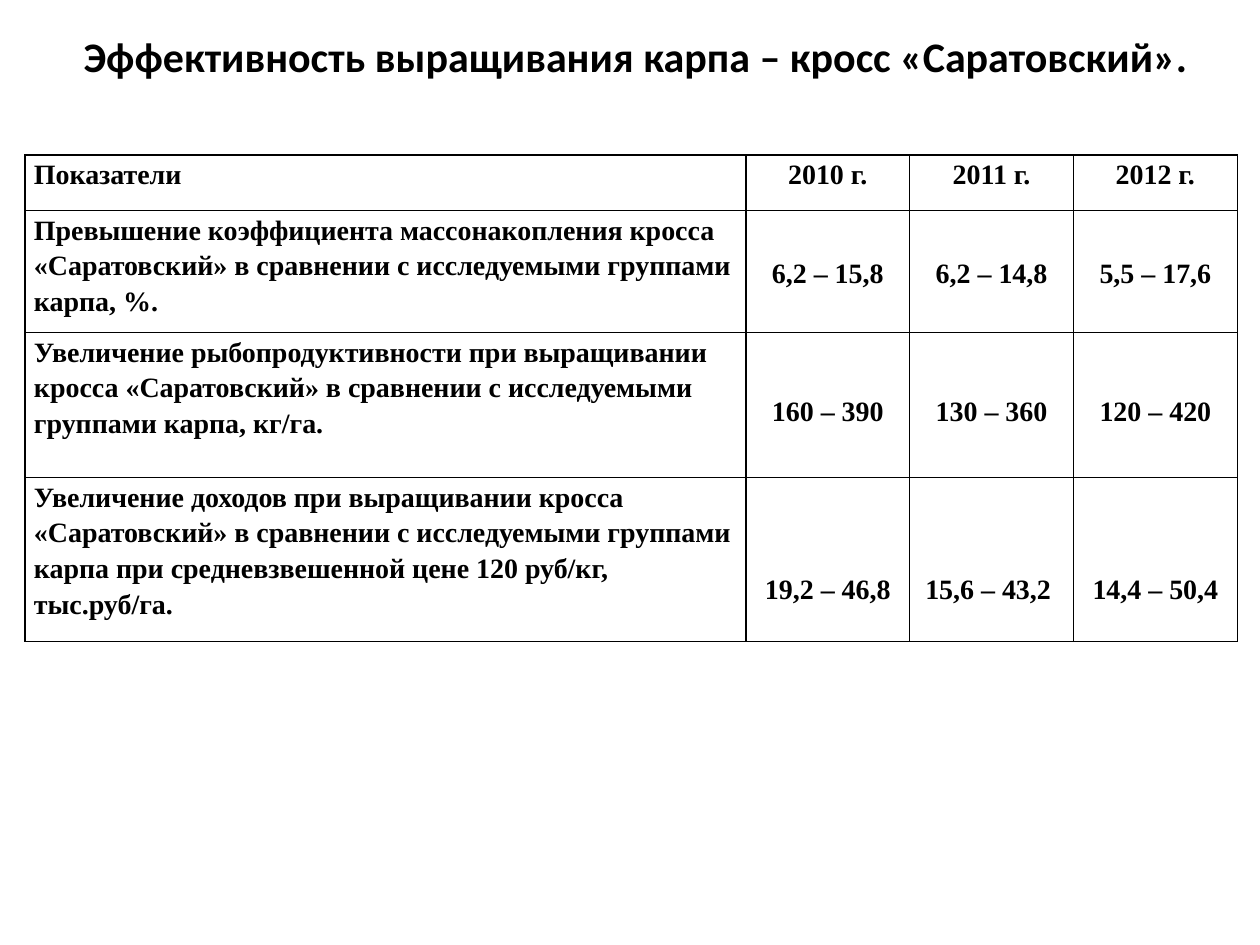
"""Builds a slide with a table on the efficiency of growing the Saratov carp cross."""
import pptx
import pptx.dml.color
import pptx.enum.text
import pptx.oxml
import pptx.oxml.ns
import pptx.util

Inches = pptx.util.Inches
ALIGN = pptx.enum.text.PP_ALIGN
ANCHOR = pptx.enum.text.MSO_ANCHOR

TITLE = "Эффективность выращивания карпа – кросс «Саратовский»."
HEADER = ("Показатели", "2010 г.", "2011 г.", "2012 г.")
ROWS = [
    ("Превышение коэффициента массонакопления кросса «Саратовский» в сравнении "
     "с исследуемыми группами карпа, %.",
     "6,2 – 15,8", "6,2 – 14,8", "5,5 – 17,6"),
    ("Увеличение рыбопродуктивности при выращивании кросса «Саратовский» "
     "в сравнении с исследуемыми группами карпа, кг/га.",
     "160 – 390", "130 – 360", "120 – 420"),
    ("Увеличение доходов при выращивании кросса «Саратовский» в сравнении "
     "с исследуемыми группами карпа при средневзвешенной цене 120 руб/кг, тыс.руб/га.",
     "19,2 – 46,8", "15,6 – 43,2 ", "14,4 – 50,4"),
]
COLUMN_WIDTHS = (5.72, 1.3, 1.3, 1.3)
ROW_HEIGHTS = (0.44, 0.97, 1.15, 1.3)
VALUE_OFFSETS = (0, 0.38, 0.51, 0.77)
BLACK, WHITE = "000000", "FFFFFF"


def color(value):
    return pptx.dml.color.RGBColor.from_string(value)


def write(frame, text, *, size, font, align, spacing=1.0, after=0):
    frame.word_wrap = True
    paragraph = frame.paragraphs[0]
    paragraph.alignment = align
    paragraph.line_spacing = spacing
    paragraph.space_after = pptx.util.Pt(after)
    run = paragraph.add_run()
    run.text = text
    run.font.size = pptx.util.Pt(size)
    run.font.name = font
    run.font.bold = True
    run.font.color.rgb = color(BLACK)


def draw_borders(cell):
    properties = cell._tc.get_or_add_tcPr()
    for side in ("lnL", "lnR", "lnT", "lnB"):
        properties.append(pptx.oxml.parse_xml(
            f'<a:{side} {pptx.oxml.ns.nsdecls("a")} w="{pptx.util.Pt(1)}"><a:solidFill>'
            f'<a:srgbClr val="{BLACK}"/></a:solidFill></a:{side}>'))


def add_title(slide):
    title = slide.shapes.title
    title.left, title.top = Inches(0.2), Inches(0.13)
    title.width, title.height = Inches(9.69), Inches(0.63)
    title.text_frame.vertical_anchor = ANCHOR.MIDDLE
    write(title.text_frame, TITLE, size=24, font="Calibri", align=ALIGN.CENTER)


def add_indicator_table(slide):
    content = [HEADER, *ROWS]
    table = slide.shapes.add_table(
        len(content), len(HEADER), Inches(0.2), Inches(1.23),
        Inches(sum(COLUMN_WIDTHS)), Inches(sum(ROW_HEIGHTS))).table
    table.first_row = table.horz_banding = False
    for column, width in zip(table.columns, COLUMN_WIDTHS):
        column.width = Inches(width)
    for row, height in zip(table.rows, ROW_HEIGHTS):
        row.height = Inches(height)
    for row_index, texts in enumerate(content):
        for column_index, text in enumerate(texts):
            cell = table.cell(row_index, column_index)
            is_label = column_index == 0
            is_spaced = is_label or row_index == 0
            draw_borders(cell)
            cell.fill.solid()
            cell.fill.fore_color.rgb = color(WHITE)
            cell.vertical_anchor = ANCHOR.TOP
            cell.margin_left = cell.margin_right = Inches(0.07)
            cell.margin_top = Inches(0 if is_label else VALUE_OFFSETS[row_index])
            cell.margin_bottom = 0
            write(cell.text_frame, text, size=16, font="Times New Roman",
                  align=ALIGN.LEFT if is_label else ALIGN.CENTER,
                  spacing=1.15 if is_spaced else 1.0, after=10 if is_spaced else 0)


def main():
    presentation = pptx.Presentation()
    presentation.slide_width, presentation.slide_height = Inches(10), Inches(7.5)
    slide = presentation.slides.add_slide(presentation.slide_layouts[5])
    add_title(slide)
    add_indicator_table(slide)
    presentation.save("out.pptx")


if __name__ == "__main__":
    main()
